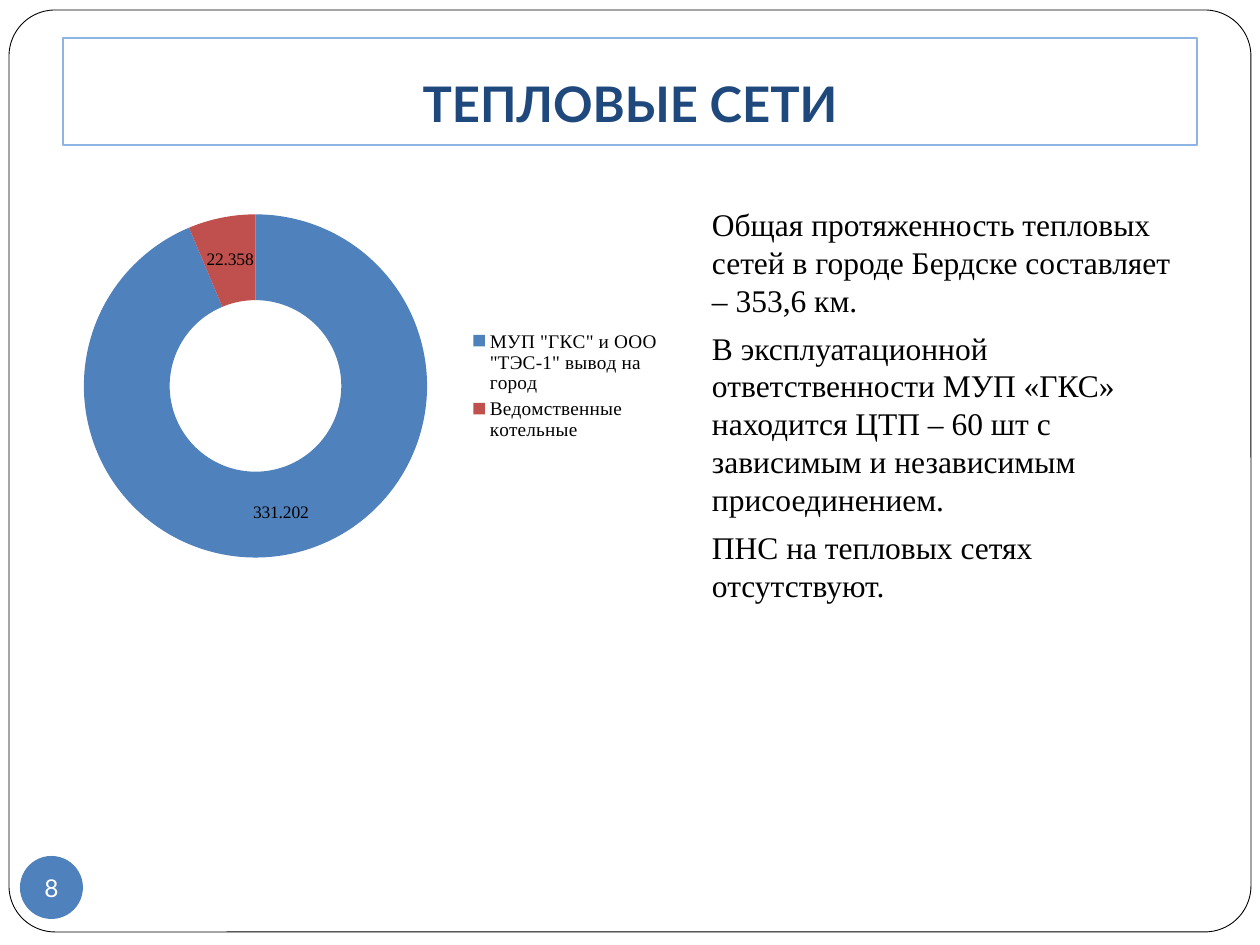
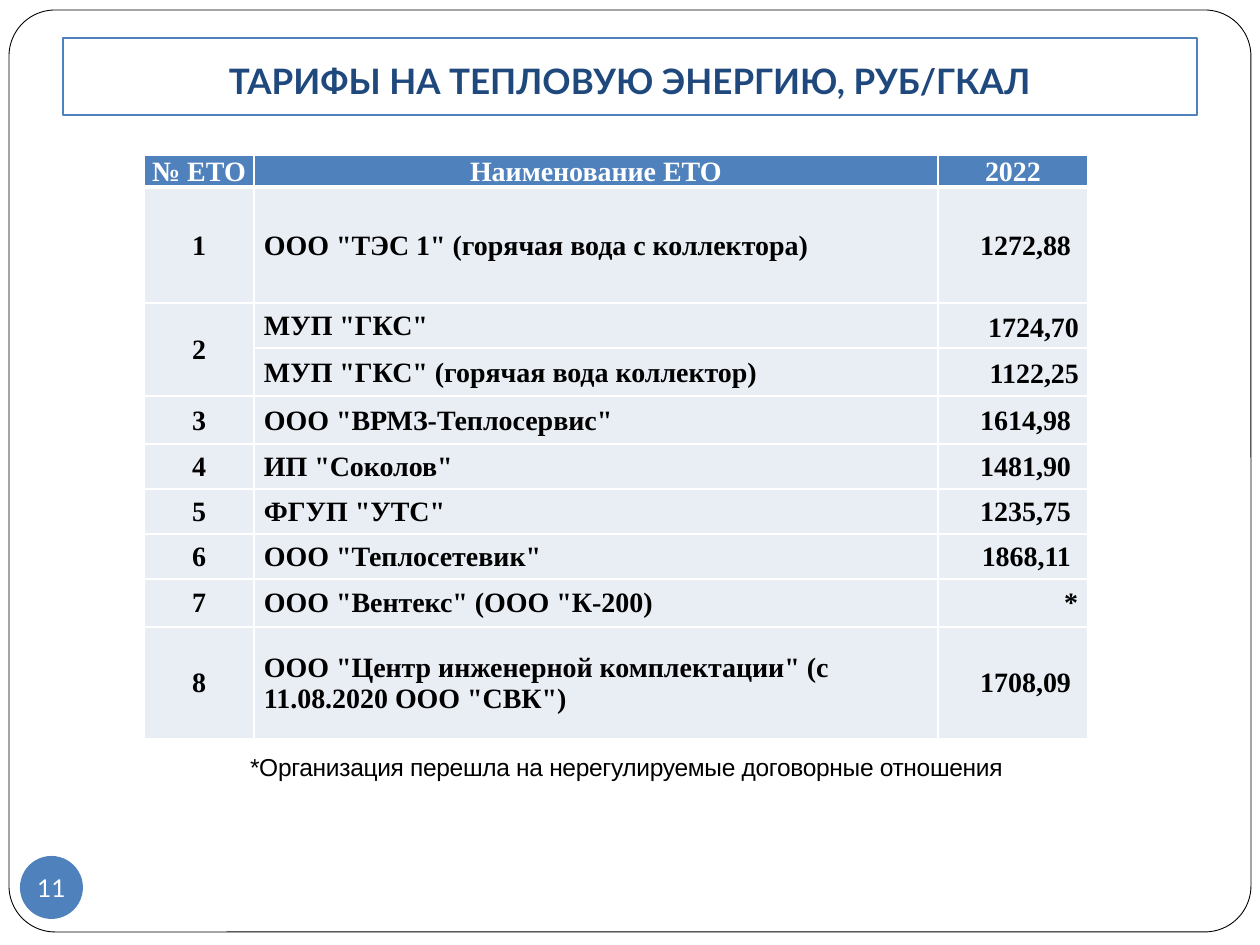
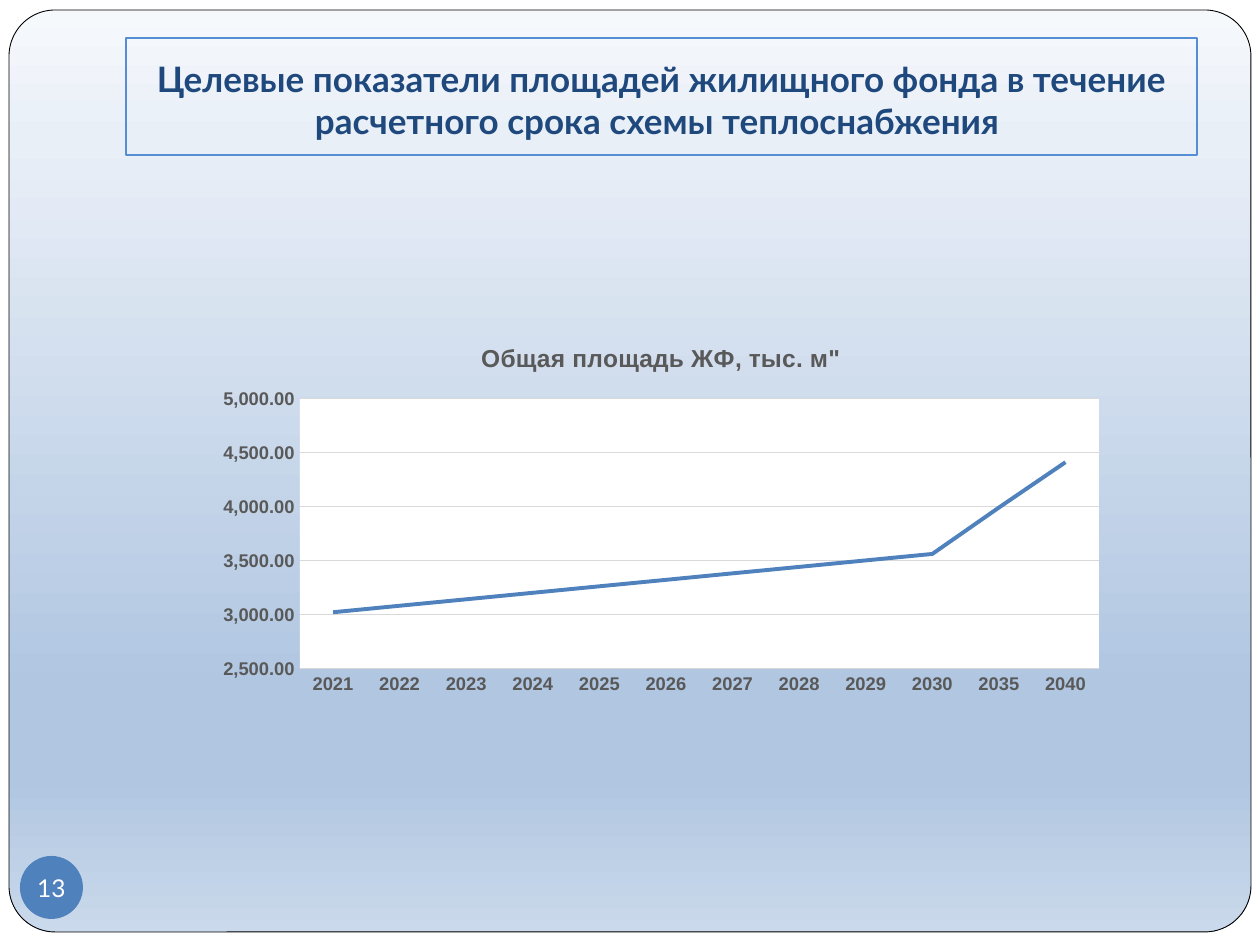
from lxml import etree
from pptx import Presentation
from pptx import util as u
from pptx.chart import data
from pptx.dml.color import RGBColor
from pptx.enum import chart as ch, shapes, text
from pptx.oxml import ns

HUES = {"white": "FFFFFF", "black": "000000", "blue": "4F81BD", "red": "C0504D",
        "navy": "1F497D", "gray": "595959", "grid": "D9D9D9", "cell": "E9EDF4",
        "sky": "8EB4E3", "azure": "558ED5"}
HUE = {name: RGBColor.from_string(code) for name, code in HUES.items()}
FADE = [(0, "F6F9FC"), (14, "E9EFF7"), (74, "B0C6E1"), (83, "B0C6E1"), (100, "CAD9EB")]
SERIF = "Times New Roman"
EMU = 914400 / 126
MID, LOW, TOP = text.MSO_ANCHOR.MIDDLE, text.MSO_ANCHOR.BOTTOM, text.MSO_ANCHOR.TOP
LEFT, RIGHT, CENTER = text.PP_ALIGN.LEFT, text.PP_ALIGN.RIGHT, text.PP_ALIGN.CENTER


def px(*vals):
    return [u.Emu(round(val * EMU)) for val in vals]


def write(box, lines, face, size, hue, bold=False, pad=(13, 6, 13, 6), anchor=TOP, **form):
    """Fill a text frame or table cell, one paragraph per line; pad is left, top, right, bottom."""
    for side, gap in zip(("left", "top", "right", "bottom"), px(*pad)):
        setattr(box, f"margin_{side}", gap)
    box.vertical_anchor = anchor
    frame = getattr(box, "text_frame", box)
    frame.text = "\n".join(lines)
    for para in frame.paragraphs:
        for key, val in form.items():
            setattr(para, key, val)
        font = para.runs[0].font
        for key, val in {"name": face, "size": u.Pt(size), "bold": bold}.items():
            setattr(font, key, val)
        font.color.rgb = HUE[hue]


deck = Presentation()
deck.slide_width, deck.slide_height = px(1260, 945)

# Shared frame, title and number badge
pages = [
    ("ТЕПЛОВЫЕ СЕТИ", 28, (63, 38, 1134, 107), "sky", 8),
    ("ТАРИФЫ НА ТЕПЛОВУЮ ЭНЕРГИЮ, РУБ/ГКАЛ", 20, (63, 38, 1134, 77), "blue", 11),
    ("Целевые показатели площадей жилищного фонда в течение расчетного срока "
     "схемы теплоснабжения ", 20, (126, 38, 1071, 117), "azure", 13),
]
slides = []
for head, size, spot, edge, num in pages:
    slide = deck.slides.add_slide(deck.slide_layouts[5])
    slides.append(slide)

    rim = slide.shapes.add_shape(shapes.MSO_SHAPE.ROUNDED_RECTANGLE, *px(9, 10, 1242, 922))
    rim.adjustments[0] = 0.05
    rim.shadow.inherit = False
    rim.fill.solid()
    rim.fill.fore_color.rgb = HUE["white"]
    rim.line.color.rgb = HUE["black"]
    rim.line.width = u.Pt(0.5)
    slide.shapes._spTree.insert(2, rim._element)

    title = slide.shapes.title
    title.left, title.top, title.width, title.height = px(*spot)
    title.line.color.rgb = HUE[edge]
    title.line.width = u.Pt(0.75)
    title.text_frame.word_wrap = True
    title.text_frame.auto_size = text.MSO_AUTO_SIZE.NONE
    write(title.text_frame, [head], "Lato", size, "navy", True, (13, 6, 13, 13), LOW,
          alignment=CENTER)

    badge = slide.shapes.add_shape(shapes.MSO_SHAPE.OVAL, *px(20, 856, 63, 63))
    badge.shadow.inherit = False
    badge.fill.solid()
    badge.fill.fore_color.rgb = HUE["blue"]
    badge.line.fill.background()
    badge.text_frame.word_wrap = False
    write(badge.text_frame, [str(num)], "Lato", 14, "white", False, (0, 0, 0, 0), MID,
          alignment=CENTER)

nets, rates, homes = slides

# Heat networks: doughnut and notes
facts = nets.shapes.add_textbox(*px(699, 199, 498, 630)).text_frame
facts.word_wrap = True
write(facts, [
    "Общая протяженность тепловых сетей в городе Бердске составляет – 353,6 км.",
    "В эксплуатационной ответственности МУП «ГКС» находится ЦТП – 60 шт с зависимым "
    "и независимым присоединением.",
    "ПНС на тепловых сетях отсутствуют.",
], SERIF, 18, "black", space_before=u.Pt(5.8))

share = data.CategoryChartData()
share.categories = ['МУП "ГКС" и ООО "ТЭС-1" вывод на город', "Ведомственные котельные"]
share.add_series("Series 1", [331.202, 22.358])
ring = nets.shapes.add_chart(ch.XL_CHART_TYPE.DOUGHNUT, *px(44, 197, 630, 378), share).chart
ring.has_title = False
ring.has_legend = True
ring.legend.position = ch.XL_LEGEND_POSITION.RIGHT
ring.legend.include_in_layout = False
plot = ring.plots[0]
plot.has_data_labels = True
plot.data_labels.show_value = True
plot.data_labels.show_percentage = False
for font, size in ((ring.font, 10), (ring.legend.font, 11), (plot.data_labels.font, 10)):
    font.name, font.size = SERIF, u.Pt(size)
    font.color.rgb = HUE["black"]
for spot, hue in enumerate(("blue", "red")):
    fill = plot.series[0].points[spot].format.fill
    fill.solid()
    fill.fore_color.rgb = HUE[hue]

# Tariffs: table and footnote
rows = [
    ("№ ЕТО", "Наименование ЕТО", "2022"),
    ("1", 'ООО "ТЭС 1" (горячая вода с коллектора)', "1272,88 "),
    ("2", 'МУП "ГКС"', "1724,70"),
    ("", 'МУП "ГКС" (горячая вода коллектор)', "1122,25"),
    ("3", 'ООО "ВРМЗ-Теплосервис"', "1614,98 "),
    ("4", 'ИП "Соколов"', "1481,90 "),
    ("5", 'ФГУП "УТС"', "1235,75 "),
    ("6", 'ООО "Теплосетевик"', "1868,11 "),
    ("7", 'ООО "Вентекс" (ООО "К-200)', "*"),
    ("8", 'ООО "Центр инженерной комплектации" (с 11.08.2020 ООО "СВК")', "1708,09 "),
]
grid = rates.shapes.add_table(len(rows), 3, *px(144, 155, 944, 588)).table
grid.horz_banding = False
for col, wide in zip(grid.columns, px(110, 684, 150)):
    col.width = wide
for row, tall in zip(grid.rows, px(24, 116, 45, 48, 48, 45, 45, 45, 48, 112)):
    row.height = tall
grid.cell(2, 0).merge(grid.cell(3, 0))

sides = [(CENTER, (1, 1, 1, 0)), (LEFT, (10, 1, 1, 0)), (RIGHT, (1, 1, 10, 0))]
for r, row in enumerate(rows):
    for c, word in enumerate(row):
        cell = grid.cell(r, c)
        props = cell._tc.get_or_add_tcPr()
        for tag in ("lnL", "lnR", "lnT", "lnB"):
            thick = 3 if (r, tag) in ((0, "lnB"), (1, "lnT")) else 1
            line = etree.SubElement(props, ns.qn(f"a:{tag}"), w=str(u.Pt(thick)))
            tint = etree.SubElement(line, ns.qn("a:solidFill"))
            etree.SubElement(tint, ns.qn("a:srgbClr"), val=HUES["white"])
        cell.fill.solid()
        cell.fill.fore_color.rgb = HUE["cell" if r else "blue"]
        if not word:
            continue
        align, pad = sides[c if r else 0]
        form = {"alignment": align}
        if c == 2 and r in (2, 3):
            pad = (9, 0, 9, 0)
            form |= {"line_spacing": 1.15, "space_after": u.Pt(6)}
        write(cell, [word], SERIF, 16, "black" if r else "white", True, pad, MID, **form)

note = rates.shapes.add_textbox(*px(174, 742, 912, 44)).text_frame
note.word_wrap = True
write(note, ["*Организация перешла на нерегулируемые договорные отношения"], "Arial", 14, "black",
      alignment=text.PP_ALIGN.JUSTIFY, line_spacing=1.15, space_after=u.Pt(6))
para = note.paragraphs[0]
para._p.get_or_add_pPr().set("indent", str(px(63)[0]))
para.runs[0]._r.get_or_add_rPr().set("spc", "-20")

# Housing stock: shaded frame and line chart
rim = homes.shapes[0]
rim.fill.gradient()
rim.fill.gradient_angle = 270
stops = rim._element.spPr.find(".//" + ns.qn("a:gsLst"))
stops.clear()
for pos, code in FADE:
    stop = etree.SubElement(stops, ns.qn("a:gs"), pos=str(pos * 1000))
    etree.SubElement(stop, ns.qn("a:srgbClr"), val=code)

name = 'Общая площадь ЖФ, тыс. м"'
area = data.CategoryChartData()
area.categories = [str(year) for year in (*range(2021, 2031), 2035, 2040)]
area.add_series(name, [*range(3020, 3501, 60), 3560, 3990, 4410])
trend = homes.shapes.add_chart(ch.XL_CHART_TYPE.LINE, *px(205, 324, 912, 378), area).chart
trend.has_legend = False
trend.has_title = True
trend.chart_title.include_in_layout = False
trend.chart_title.text_frame.text = name
years, vals = trend.category_axis, trend.value_axis
label = trend.chart_title.text_frame.paragraphs[0].runs[0].font
for font, size in ((label, 14), (years.tick_labels.font, 10.5), (vals.tick_labels.font, 10.5)):
    font.name, font.size, font.bold = "Arial", u.Pt(size), True
    font.color.rgb = HUE["gray"]
for axis in (years, vals):
    axis.major_tick_mark = axis.minor_tick_mark = ch.XL_TICK_MARK.NONE
for key, val in {"minimum_scale": 2500, "maximum_scale": 5000, "major_unit": 500,
                 "has_major_gridlines": True}.items():
    setattr(vals, key, val)
vals.tick_labels.number_format = "#,##0.00"
vals.tick_labels.number_format_is_linked = False
vals.format.line.fill.background()

curve = trend.plots[0].series[0]
curve.smooth = False
curve.marker.style = ch.XL_MARKER_STYLE.NONE
for line, hue, thick in ((years.format.line, "grid", 0.75),
                         (vals.major_gridlines.format.line, "grid", 0.75),
                         (curve.format.line, "blue", 2.25)):
    line.color.rgb = HUE[hue]
    line.width = u.Pt(thick)

back = etree.SubElement(trend._chartSpace.chart.plotArea, ns.qn("c:spPr"))
tint = etree.SubElement(back, ns.qn("a:solidFill"))
etree.SubElement(tint, ns.qn("a:srgbClr"), val=HUES["white"])

deck.save("out.pptx")
